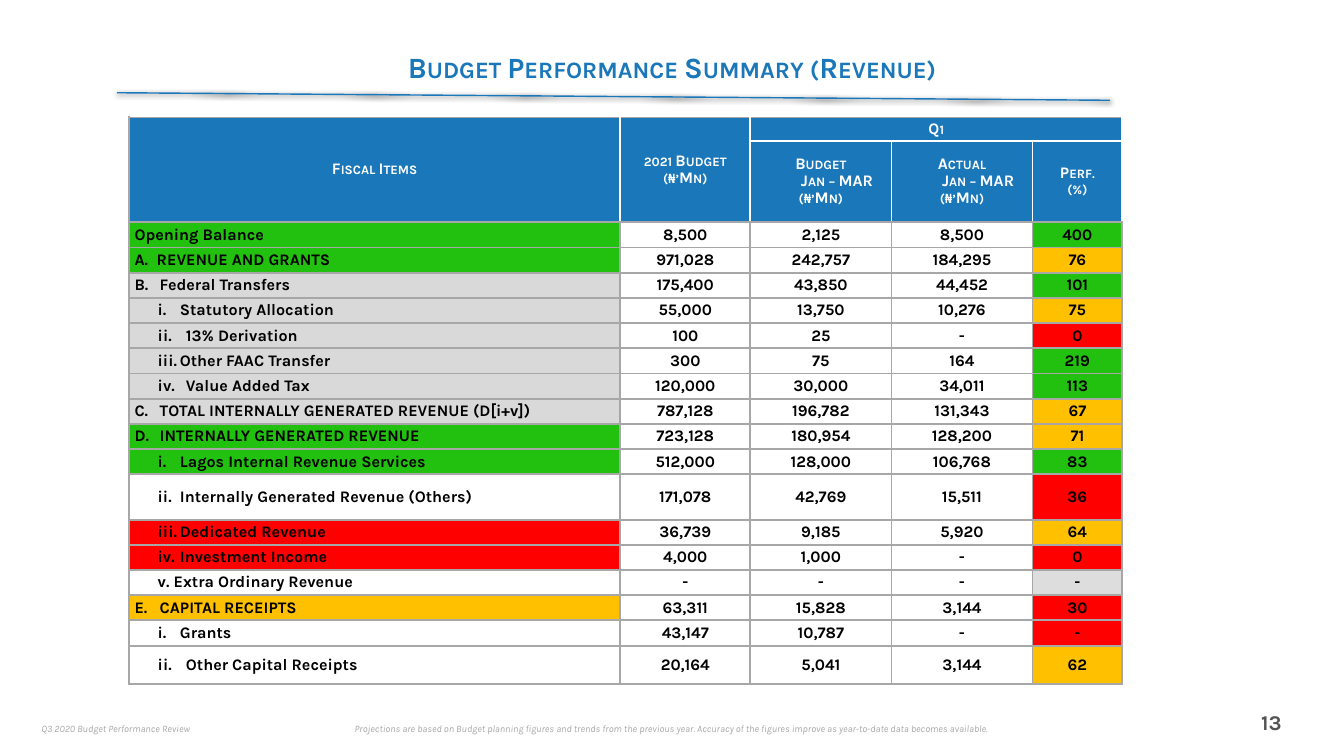
from lxml import etree
from pptx import Presentation
from pptx.dml.color import RGBColor
from pptx.enum.shapes import MSO_CONNECTOR
from pptx.enum.text import MSO_ANCHOR, MSO_AUTO_SIZE, PP_ALIGN
from pptx.oxml.ns import qn
from pptx.util import Inches, Pt

FONT = "Karla"
BLUE, WHITE, BLACK = "1A77B9", "FFFFFF", "000000"
GREEN, AMBER, RED = "22C00F", "FFC000", "FF0000"
GREY, SILVER, PALE, RULE = "D9D9D9", "A7A7A7", "DDDDDD", "A7A7A7"

COLS = [9.75, 2.58, 2.8, 2.8, 1.78]
HEADER_HEIGHTS = [0.46, 1.62]
ROW_HEIGHT = 0.5
TALL_ROWS = {"Internally Generated Revenue (Others)": 0.9, "Other Capital Receipts": 0.76}
HEADERS = [
    (0, 0, ["Fiscal Items"]),
    (0, 1, ["2021 Budget", "(₦’Mn)"]),
    (0, 2, ["Q1"]),
    (1, 2, ["Budget", "Jan – MAR", "(₦’Mn)"]),
    (1, 3, ["Actual", "Jan – MAR", "(₦’Mn)"]),
    (1, 4, ["Perf.", "(%)"]),
]
MERGES = [((0, 0), (1, 0)), ((0, 1), (1, 1)), ((0, 2), (0, 4))]

ALPHA, ROMAN = "alphaUcPeriod", "romanLcPeriod"
LEFT = {ALPHA: 0.1, ROMAN: 0.56}
ITEMS = [
    ("Opening Balance", ALPHA, 0, 0, GREEN, "8,500 2,125 8,500 400", GREEN),
    ("REVENUE AND GRANTS", ALPHA, 1, 0.44, GREEN, "971,028 242,757 184,295 76", AMBER),
    ("Federal Transfers", ALPHA, 2, 0.5, GREY, "175,400 43,850 44,452 101", GREEN),
    ("Statutory Allocation", ROMAN, 1, 0.44, GREY, "55,000 13,750 10,276 75", AMBER),
    ("13% Derivation", ROMAN, 2, 0.56, GREY, "100 25 - 0", RED),
    ("Other FAAC Transfer", ROMAN, 3, 0.44, GREY, "300 75 164 219", GREEN),
    ("Value Added Tax", ROMAN, 4, 0.56, GREY, "120,000 30,000 34,011 113", GREEN),
    ("TOTAL INTERNALLY GENERATED REVENUE (D[i+v])", ALPHA, 3, 0.5, GREY,
     "787,128 196,782 131,343 67", AMBER),
    ("INTERNALLY GENERATED REVENUE", ALPHA, 4, 0.5, GREEN, "723,128 180,954 128,200 71", AMBER),
    ("Lagos Internal Revenue Services", ROMAN, 1, 0.44, GREEN,
     "512,000 128,000 106,768 83", GREEN),
    ("Internally Generated Revenue (Others)", ROMAN, 2, 0.44, WHITE,
     "171,078 42,769 15,511 36", RED),
    ("Dedicated Revenue", ROMAN, 3, 0.44, RED, "36,739 9,185 5,920 64", AMBER),
    ("Investment Income", ROMAN, 4, 0.44, RED, "4,000 1,000 - 0", RED),
    ("v. Extra Ordinary Revenue", ROMAN, 0, 0, None, "- - - -", PALE),
    ("CAPITAL RECEIPTS", ALPHA, 5, 0.5, AMBER, "63,311 15,828 3,144 30", RED),
    ("Grants", ROMAN, 1, 0.44, WHITE, "43,147 10,787 - -", RED),
    ("Other Capital Receipts", ROMAN, 2, 0.56, WHITE, "20,164 5,041 3,144 62", AMBER),
]


def rgb(color):
    return RGBColor.from_string(color)


def style_runs(p, size, color, bold=False, italic=False, small=False):
    for r in p.runs:
        f = r.font
        f.name, f.size, f.bold, f.italic = FONT, Pt(size), bold, italic
        f.color.rgb = rgb(color)
        if small:
            r._r.get_or_add_rPr().set("cap", "small")


def add_text(slide, text, box, size, color, align=PP_ALIGN.CENTER, inset=0.05, **style):
    sp = slide.shapes.add_textbox(*map(Inches, box))
    tf = sp.text_frame
    tf.word_wrap = True
    tf.auto_size = MSO_AUTO_SIZE.SHAPE_TO_FIT_TEXT
    tf.margin_left = tf.margin_right = tf.margin_top = tf.margin_bottom = Inches(inset)
    tf.text = text
    p = tf.paragraphs[0]
    p.alignment = align
    style_runs(p, size, color, **style)
    return sp


def add_title_rule(slide):
    line = slide.shapes.add_connector(
        MSO_CONNECTOR.STRAIGHT, Inches(2.32), Inches(1.84), Inches(22.03), Inches(1.99))
    line.line.color.rgb = rgb(BLUE)
    line.line.width = Pt(2)
    effects = etree.SubElement(line._element.spPr, qn("a:effectLst"))
    shadow = etree.SubElement(effects, qn("a:outerShdw"), blurRad=str(Pt(8)),
                              dist=str(Pt(2)), dir="5400000", rotWithShape="0")
    color = etree.SubElement(shadow, qn("a:srgbClr"), val=BLACK)
    etree.SubElement(color, qn("a:alpha"), val="75000")


def set_borders(cell, white=""):
    tcPr = cell._tc.get_or_add_tcPr()
    for side in "LRTB":
        ln = etree.SubElement(tcPr, qn(f"a:ln{side}"), w=str(Pt(3)))
        fill = etree.SubElement(ln, qn("a:solidFill"))
        etree.SubElement(fill, qn("a:srgbClr"), val=WHITE if side in white else RULE)


def format_cell(cell, fill, white=""):
    set_borders(cell, white)
    if fill:
        cell.fill.solid()
        cell.fill.fore_color.rgb = rgb(fill)
    else:
        cell.fill.background()
    cell.vertical_anchor = MSO_ANCHOR.MIDDLE
    cell.margin_left = cell.margin_right = cell.margin_top = cell.margin_bottom = Inches(0.01)


def indent(p, left, hang=0):
    pPr = p._p.get_or_add_pPr()
    pPr.set("marL", str(Inches(left + hang)))
    pPr.set("indent", str(Inches(-hang)))
    return pPr


def fill_header(table):
    for row in range(2):
        for col in range(len(COLS)):
            white = "R" + ("L" if col else "")
            if col >= 2:
                white += "TB"[1 - row]
            format_cell(table.cell(row, col), BLUE, white)
    for first, last in MERGES:
        table.cell(*first).merge(table.cell(*last))
    for row, col, lines in HEADERS:
        tf = table.cell(row, col).text_frame
        tf.text = "\n".join(lines)
        for p in tf.paragraphs:
            p.alignment = PP_ALIGN.CENTER
            p.line_spacing = 0.9
            if p.text.startswith("Jan"):
                indent(p, 0.64)
            style_runs(p, 23, WHITE, bold=True, small=True)


def fill_item(table, row, item):
    label, numbering, start, hang, fill, values, rating = item
    texts = [label] + values.split()
    fills = [fill, None, None, None, rating]
    for col, (text, color) in enumerate(zip(texts, fills)):
        cell = table.cell(row, col)
        format_cell(cell, color)
        cell.text_frame.text = text
        p = cell.text_frame.paragraphs[0]
        if col:
            p.alignment = PP_ALIGN.CENTER
        else:
            pPr = indent(p, LEFT[numbering], hang)
            if start:
                etree.SubElement(pPr, qn("a:buAutoNum"), type=numbering, startAt=str(start))
        style_runs(p, 23, BLACK, bold=True)


def add_revenue_table(slide):
    heights = HEADER_HEIGHTS + [TALL_ROWS.get(item[0], ROW_HEIGHT) for item in ITEMS]
    table = slide.shapes.add_table(
        len(heights), len(COLS), Inches(2.56), Inches(2.33),
        Inches(sum(COLS)), Inches(sum(heights))).table
    table.first_row = table.horz_banding = False
    for column, width in zip(table.columns, COLS):
        column.width = Inches(width)
    for row, height in zip(table.rows, heights):
        row.height = Inches(height)
    fill_header(table)
    for row, item in enumerate(ITEMS, start=2):
        fill_item(table, row, item)


def main():
    prs = Presentation()
    prs.slide_width, prs.slide_height = Inches(26.67), Inches(15)
    slide = prs.slides.add_slide(prs.slide_layouts[6])
    add_text(slide, "Q3 2020 Budget Performance Review", (0.77, 14.29, 4.18, 0.32),
             14, SILVER, PP_ALIGN.LEFT, italic=True)
    add_title_rule(slide)
    add_text(slide, "Projections are based on Budget planning figures and trends from the "
             "previous year. Accuracy of the figures improve as year-to-date data becomes "
             "available.", (6.28, 14.29, 14.1, 0.32), 14, SILVER, italic=True)
    add_text(slide, "13", (24.83, 14.03, 0.8, 0.59), 30, "535353", inset=0.04, bold=True)
    add_revenue_table(slide)
    title = add_text(slide, "Budget Performance Summary (Revenue)", (4.39, 0.94, 17.89, 0.75),
                     42, BLUE, inset=0.04, bold=True, small=True)
    title.text_frame.vertical_anchor = MSO_ANCHOR.MIDDLE
    prs.save("out.pptx")


if __name__ == "__main__":
    main()
